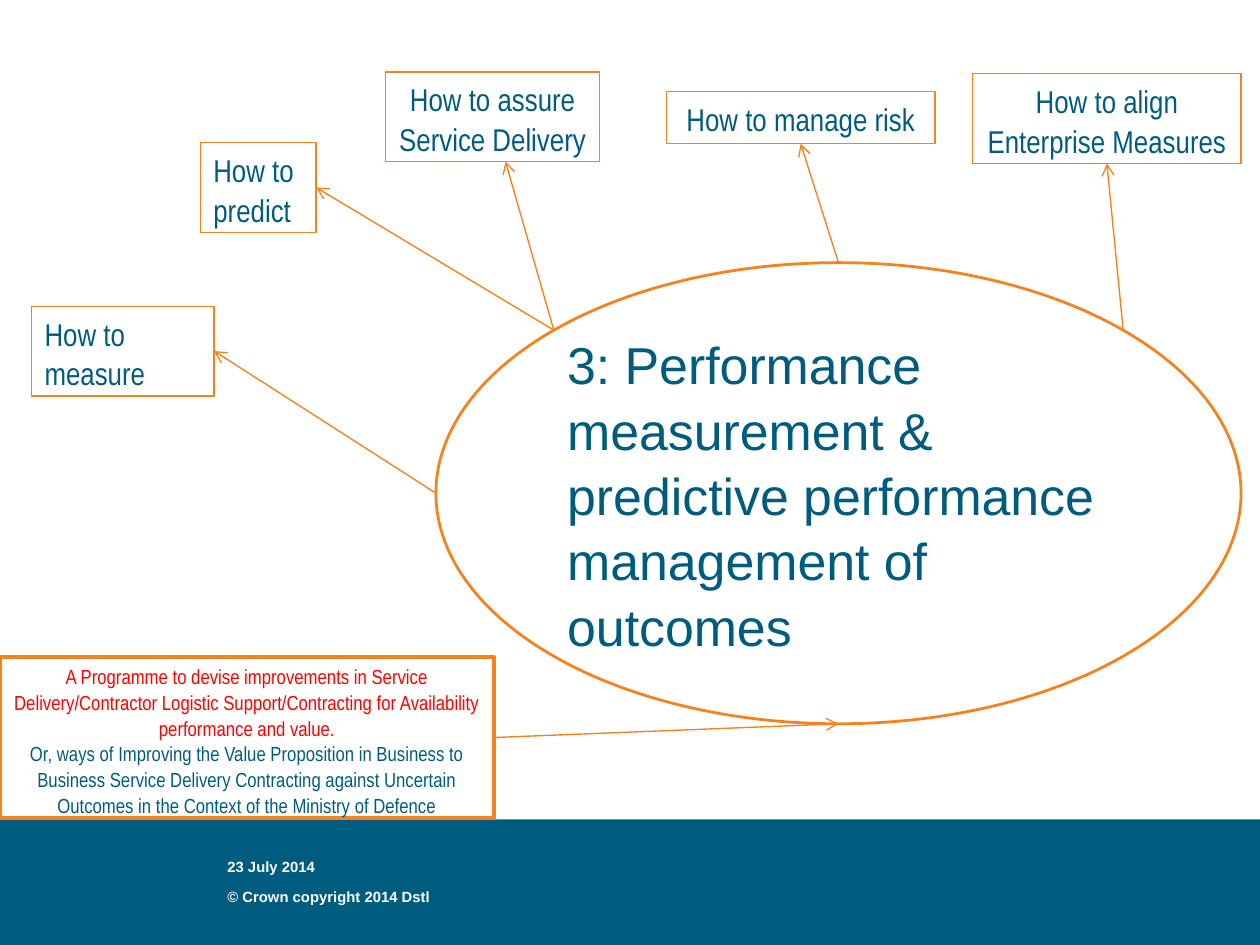
from lxml import etree
from pptx import Presentation
from pptx.dml.color import RGBColor
from pptx.enum.shapes import MSO_CONNECTOR, MSO_SHAPE
from pptx.enum.text import MSO_ANCHOR, MSO_AUTO_SIZE, PP_ALIGN
from pptx.oxml.ns import qn
from pptx.util import Inches, Pt

LEFT, CENTER = PP_ALIGN.LEFT, PP_ALIGN.CENTER
TOP, MIDDLE, BOTTOM = MSO_ANCHOR.TOP, MSO_ANCHOR.MIDDLE, MSO_ANCHOR.BOTTOM
RECTANGLE, OVAL = MSO_SHAPE.RECTANGLE, MSO_SHAPE.OVAL

COLORS = {"blue": "005C7E", "orange": "F5821F", "red": "FF0000", "white": "FFFFFF"}
WIDTH, HEIGHT = Inches(9.45), Inches(7.09)
LINE_SPACING = 1.05

# Content; every frame is left, top, width, height in percent of the slide
TITLE = ["3: Performance measurement & predictive performance",
         "management of outcomes"]
OUTCOMES = (34.6, 27.8, 63.9, 48.8)
BAND = (0, 86.7, 100, 13.3)
PROGRAMME = (0, 69.5, 39.2, 17.1)
PROGRAMME_TEXT = [
    ("A Programme to devise improvements in Service Delivery/Contractor Logistic "
     "Support/Contracting for Availability performance and value.", "red"),
    ("Or, ways of Improving the Value Proposition in Business to Business Service "
     "Delivery Contracting against Uncertain Outcomes in the Context of the "
     "Ministry of Defence", "blue"),
]
FOOTER = [
    ("23 July 2014", (17, 88.9, 19.2, 4.4), BOTTOM),
    ("© Crown copyright 2014 Dstl", (17, 93.2, 19.2, 4.4), TOP),
]

# Points on a frame, as shares of its width and height
CORNER = 0.1464  # where the diagonal of the frame meets the ellipse
MID_LEFT, MID_RIGHT = (0, 0.5), (1, 0.5)
MID_TOP, MID_BOTTOM = (0.5, 0), (0.5, 1)
UPPER_LEFT, UPPER_RIGHT = (CORNER, CORNER), (1 - CORNER, CORNER)

# Lines, frame, alignment, arrow start on the ellipse, arrow end on the box
QUESTIONS = [
    (["How to measure"], (2.5, 32.4, 14.5, 9.5), LEFT, MID_LEFT, MID_RIGHT),
    (["How to predict"], (15.9, 15.1, 9.2, 9.5), LEFT, UPPER_LEFT, MID_RIGHT),
    (["How to assure", "Service Delivery"], (30.6, 7.6, 17, 9.5), CENTER,
     UPPER_LEFT, (0.56, 1)),
    (["How to manage risk"], (52.9, 9.7, 21.3, 5.5), CENTER, MID_TOP, MID_BOTTOM),
    (["How to align", "Enterprise Measures"], (77.2, 7.8, 21.3, 9.5), CENTER,
     UPPER_RIGHT, MID_BOTTOM),
]


def color(name):
    return RGBColor.from_string(COLORS[name])


def to_slide(frame):
    left, top, width, height = frame
    return (int(WIDTH * left / 100), int(HEIGHT * top / 100),
            int(WIDTH * width / 100), int(HEIGHT * height / 100))


def point_on(frame, share):
    left, top, width, height = to_slide(frame)
    return int(left + width * share[0]), int(top + height * share[1])


def write(shape, lines, font_name, size, align=LEFT, anchor=TOP, bold=False, wrap=True):
    """Fill a shape with (text, colour name) paragraphs."""
    text_frame = shape.text_frame
    text_frame.word_wrap = wrap
    text_frame.auto_size = MSO_AUTO_SIZE.NONE
    text_frame.vertical_anchor = anchor
    for index, (text, color_name) in enumerate(lines):
        paragraph = text_frame.add_paragraph() if index else text_frame.paragraphs[0]
        paragraph.alignment = align
        paragraph.line_spacing = LINE_SPACING
        run = paragraph.add_run()
        run.text = text
        run.font.name = font_name
        run.font.size = Pt(size)
        run.font.bold = bold
        run.font.color.rgb = color(color_name)


def add_outline(slide, kind, frame, line_width):
    shape = slide.shapes.add_shape(kind, *to_slide(frame))
    shape.shadow.inherit = False
    shape.fill.background()
    shape.line.color.rgb = color("orange")
    shape.line.width = Pt(line_width)
    return shape


def add_arrow(slide, start, end):
    arrow = slide.shapes.add_connector(MSO_CONNECTOR.STRAIGHT, *start, *end)
    arrow.line.color.rgb = color("orange")
    arrow.line.width = Pt(0.75)
    etree.SubElement(arrow.line._get_or_add_ln(), qn("a:tailEnd"), type="arrow")
    etree.SubElement(arrow._element.spPr, qn("a:effectLst"))


def main():
    presentation = Presentation()
    presentation.slide_width, presentation.slide_height = WIDTH, HEIGHT
    slide = presentation.slides.add_slide(presentation.slide_layouts[5])

    # Footer band
    band = slide.shapes.add_shape(RECTANGLE, *to_slide(BAND))
    band.shadow.inherit = False
    band.fill.solid()
    band.fill.fore_color.rgb = color("blue")
    band.line.fill.background()
    for text, frame, anchor in FOOTER:
        box = slide.shapes.add_textbox(*to_slide(frame))
        write(box, [(text, "white")], "Arial", 8, anchor=anchor, bold=True)

    # Programme statement
    programme = add_outline(slide, RECTANGLE, PROGRAMME, 2)
    write(programme, PROGRAMME_TEXT, "Arial Narrow", 11, CENTER)

    # Central ellipse with the title in its inscribed rectangle
    add_outline(slide, OVAL, OUTCOMES, 1.5)
    title = slide.shapes.title
    title.left, title.top = point_on(OUTCOMES, UPPER_LEFT)
    right, bottom = point_on(OUTCOMES, (1 - CORNER, 1 - CORNER))
    title.width, title.height = right - title.left, bottom - title.top
    write(title, [(line, "blue") for line in TITLE], "Arial", 28, anchor=MIDDLE)

    # Questions around the ellipse
    for lines, frame, align, start, end in QUESTIONS:
        box = add_outline(slide, RECTANGLE, frame, 0.75)
        write(box, [(line, "blue") for line in lines], "Arial Narrow", 17, align,
              wrap=len(lines) == 1)
        add_arrow(slide, point_on(OUTCOMES, start), point_on(frame, end))
    add_arrow(slide, point_on(PROGRAMME, MID_RIGHT), point_on(OUTCOMES, MID_BOTTOM))

    presentation.save("out.pptx")


if __name__ == "__main__":
    main()
